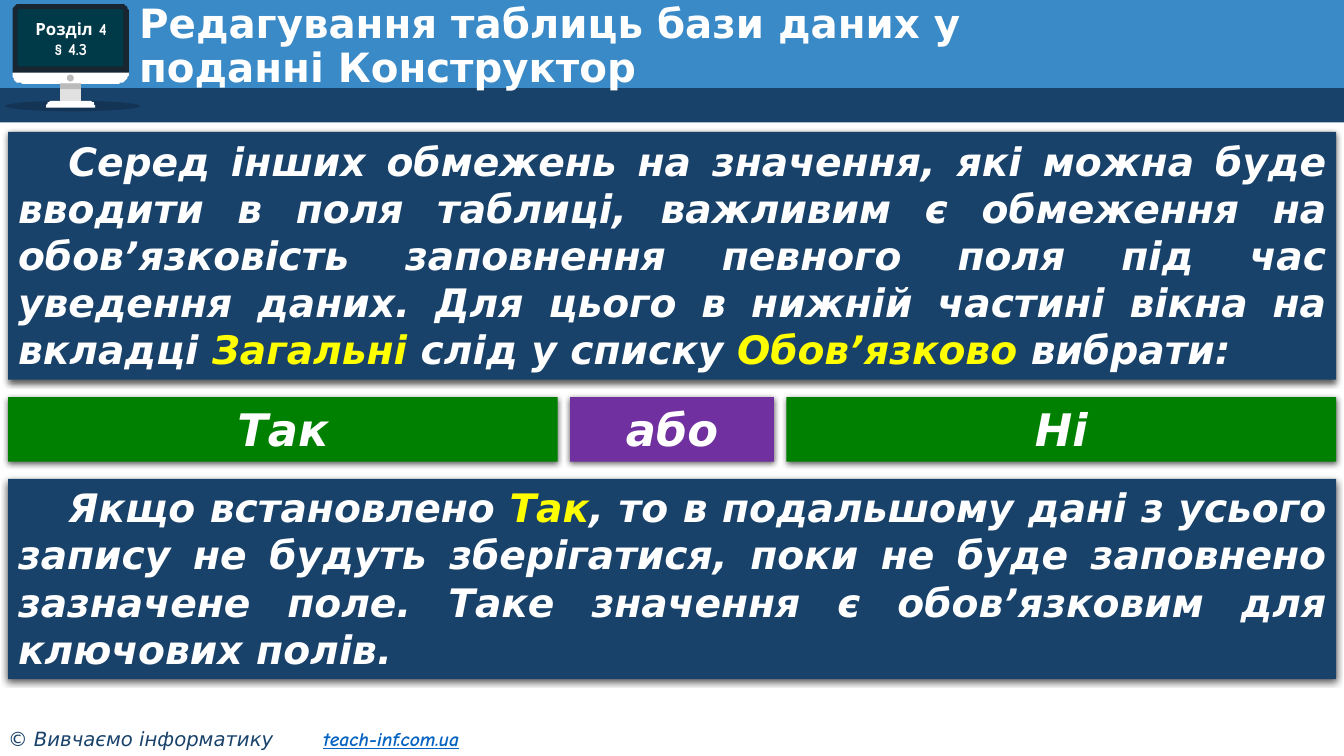
import math

from lxml import etree
from pptx import Presentation
from pptx.dml.color import RGBColor
from pptx.enum import shapes, text
from pptx.oxml import ns
from pptx.util import Pt

COLOURS = {
    "sky": "398AC7", "navy": "19426B", "white": "FFFFFF", "yellow": "FFFF00",
    "green": "008000", "purple": "7030A0", "link": "0563C1", "black": "000000",
    "casing": "182632", "screen": "003948", "stand": "E1E1E1", "grey": "BBBBBB",
}
MAIN_FONT = "DejaVu Sans"
SMALL_FONT = "Comic Neue"
MARGIN = 5.8
ANSWER_TOP = 283.7
ANSWER_GAP = 8.9


def rgb(name):
    """Return the named colour of the palette."""
    return RGBColor.from_string(COLOURS[name])


def paint(part, fill):
    """Give a shape a flat fill without outline or shadow."""
    part.shadow.inherit = False
    part.fill.solid()
    part.fill.fore_color.rgb = rgb(fill)
    part.line.fill.background()


def add_block(slide, box, fill, kind=shapes.MSO_SHAPE.RECTANGLE):
    """Add a filled preset shape at left, top, width, height."""
    block = slide.shapes.add_shape(kind, *map(Pt, box))
    paint(block, fill)
    return block


def add_rounded_end(slide, box, radius, fill, direction=1):
    """Add a panel rounded at its top, or at its bottom if direction is -1."""
    left, top, width, height = box
    rounded, flat = (top, top + height) if direction == 1 else (top + height, top)
    angles = [math.radians(step * 10) for step in range(10)]
    left_arc = [(left + radius * (1 - math.cos(a)),
                 rounded + direction * radius * (1 - math.sin(a))) for a in angles]
    right_arc = [(2 * left + width - x, y) for x, y in reversed(left_arc)]
    outline = left_arc + right_arc + [(left + width, flat)]
    builder = slide.shapes.build_freeform(left, flat, scale=Pt(1))
    builder.add_line_segments(outline, close=True)
    paint(builder.convert_to_shape(), fill)


def add_shadow(part):
    """Add a soft shadow that falls straight down."""
    effects = part._element.spPr.find(ns.qn("a:effectLst"))
    shadow = etree.SubElement(effects, ns.qn("a:outerShdw"), blurRad=str(Pt(4.5)),
                              dist=str(Pt(1.5)), dir="5400000", algn="ctr", rotWithShape="0")
    colour = etree.SubElement(shadow, ns.qn("a:srgbClr"), val=COLOURS["black"])
    etree.SubElement(colour, ns.qn("a:alpha"), val="63000")


def add_run(paragraph, words, size, colour, font=MAIN_FONT, bold=True, italic=False):
    """Append one formatted run to a paragraph."""
    run = paragraph.add_run()
    run.text = words
    run.font.size = Pt(size)
    run.font.name = font
    run.font.bold = bold
    run.font.italic = italic
    run.font.color.rgb = rgb(colour)
    return run


def add_panel(slide, box, fill, pieces, size, align):
    """Add a shadowed panel with bold italic text and return its paragraph."""
    panel = add_block(slide, box, fill)
    add_shadow(panel)
    panel.text_frame.word_wrap = True
    panel.text_frame.vertical_anchor = text.MSO_ANCHOR.TOP
    paragraph = panel.text_frame.paragraphs[0]
    paragraph.alignment = align
    for words, colour in pieces:
        add_run(paragraph, words, size, colour, italic=True)
    return paragraph


def add_explanation(slide, top, height, pieces):
    """Add a wide justified panel with an indented first line."""
    paragraph = add_panel(slide, (MARGIN, top, 948.6, height), "navy", pieces, 28,
                          text.PP_ALIGN.JUSTIFY)
    paragraph._p.get_or_add_pPr().set("indent", str(Pt(36)))


def add_answers(slide):
    """Add the row of the two answers and the word between them."""
    left = MARGIN
    for word, width, fill in (("Так", 392.6, "green"), ("або", 145.6, "purple"),
                              ("Ні", 392.6, "green")):
        add_panel(slide, (left, ANSWER_TOP, width, 46), fill, [(word, "white")], 32,
                  text.PP_ALIGN.CENTER)
        left += width + ANSWER_GAP


def add_monitor(slide):
    """Draw the computer monitor with the section number on it."""
    oval = shapes.MSO_SHAPE.OVAL
    ground = add_block(slide, (3.6, 72, 96.5, 7.5), "black", oval)
    ground_colour = ground._element.spPr.find(ns.qn("a:solidFill"))[0]
    etree.SubElement(ground_colour, ns.qn("a:alpha"), val="20000")
    add_rounded_end(slide, (8.8, 3, 83, 49.4), 5, "casing")
    add_rounded_end(slide, (8.8, 52.4, 83, 7.2), 7.2, "white", direction=-1)
    add_block(slide, (42.9, 59.6, 15, 12.4), "stand")
    add_block(slide, (42.9, 59.6, 15, 4), "grey")
    add_rounded_end(slide, (33, 72, 34.7, 4.9), 4, "white")
    add_block(slide, (47.8, 53.3, 5, 5), "grey", oval)
    screen = add_block(slide, (12.4, 6.5, 75.8, 41), "screen",
                       shapes.MSO_SHAPE.ROUNDED_RECTANGLE)
    screen.adjustments[0] = 0.036

    section = slide.shapes.add_textbox(*map(Pt, (9.4, 6.5, 82.8, 42.5))).text_frame
    section.word_wrap = True
    section.vertical_anchor = text.MSO_ANCHOR.MIDDLE
    for paragraph, words in ((section.paragraphs[0], "Розділ 4"),
                             (section.add_paragraph(), "§ 4.3")):
        paragraph.alignment = text.PP_ALIGN.CENTER
        add_run(paragraph, words, 12, "white", SMALL_FONT)


def add_title(slide):
    """Move the title placeholder over the header and fill it."""
    title = slide.shapes.title
    slide.shapes._spTree.append(title._element)
    title.left, title.top, title.width, title.height = map(Pt, (92.2, 13, 843.8, 41.8))
    frame = title.text_frame
    frame.word_wrap = True
    frame.auto_size = text.MSO_AUTO_SIZE.NONE
    frame.vertical_anchor = text.MSO_ANCHOR.MIDDLE
    heading = frame.paragraphs[0]
    heading.alignment = text.PP_ALIGN.LEFT
    heading.line_spacing = 0.9
    add_run(heading, "Редагування таблиць бази даних у", 28.8, "white")
    heading.add_line_break()
    add_run(heading, "поданні Конструктор", 28.8, "white")


def add_footer(slide):
    """Add the copyright line with the site address at a tab stop."""
    footer = slide.shapes.add_textbox(*map(Pt, (0, 515.5, 375, 24.2))).text_frame
    footer.word_wrap = True
    footer.margin_left = Pt(5.8)
    line = footer.paragraphs[0]
    tabs = etree.SubElement(line._p.get_or_add_pPr(), ns.qn("a:tabLst"))
    etree.SubElement(tabs, ns.qn("a:tab"), pos=str(Pt(225)), algn="l")
    add_run(line, "© Вивчаємо інформатику\t", 14, "navy", bold=False, italic=True)
    site = add_run(line, "teach-inf.com.ua", 14, "link", SMALL_FONT, italic=True)
    site.font.underline = True


def main():
    """Build the slide and save it."""
    deck = Presentation()
    deck.slide_width, deck.slide_height = Pt(960), Pt(540)
    slide = deck.slides.add_slide(deck.slide_layouts[5])
    add_block(slide, (0, 0, 960, 65.5), "sky")
    add_block(slide, (0, 62.9, 960, 24.5), "navy")
    add_monitor(slide)
    add_footer(slide)
    add_title(slide)
    add_explanation(slide, 94.3, 177, [
        ("Серед інших обмежень на значення, які можна буде вводити в поля таблиці, "
         "важливим є обмеження на обов’язковість заповнення певного поля під час "
         "уведення даних. Для цього в нижній частині вікна на вкладці ", "white"),
        ("Загальні", "yellow"),
        (" слід у списку ", "white"),
        ("Обов’язково", "yellow"),
        (" вибрати:", "white"),
    ])
    add_answers(slide)
    add_explanation(slide, 342, 143.2, [
        ("Якщо встановлено ", "white"),
        ("Так", "yellow"),
        (", то в подальшому дані з усього запису не будуть зберігатися, поки не буде "
         "заповнено зазначене поле. Таке значення є обов’язковим для ключових полів.",
         "white"),
    ])
    deck.save("out.pptx")


if __name__ == "__main__":
    main()
